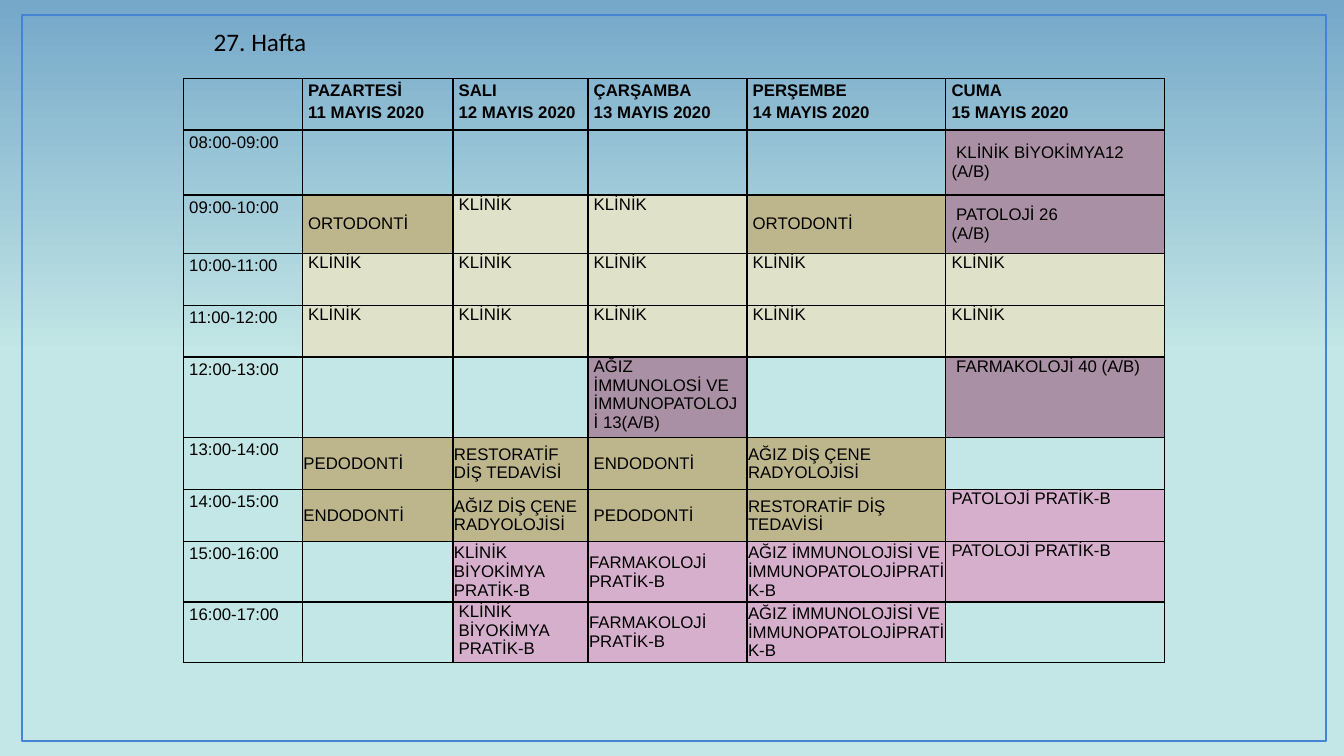
"""Build the weekly timetable slide for week 27."""
from dataclasses import dataclass

from lxml import etree
from pptx import Presentation
from pptx.dml.color import RGBColor
from pptx.enum.shapes import MSO_SHAPE
from pptx.enum.text import MSO_ANCHOR, MSO_AUTO_SIZE, PP_ALIGN
from pptx.oxml.ns import qn
from pptx.util import Inches, Pt

RECTANGLE = MSO_SHAPE.RECTANGLE
TOP, MIDDLE = MSO_ANCHOR.TOP, MSO_ANCHOR.MIDDLE
LEFT = PP_ALIGN.LEFT
FIT_TEXT = MSO_AUTO_SIZE.SHAPE_TO_FIT_TEXT

WIDTH, HEIGHT = 13.33, 7.5
COLORS = {
    "text": "000000",
    "frame": "4584D3",
    "sky_low": "C3E7E6",
    "sky_high": "75A8C9",
    "lecture": "AA90A4",
    "rotation": "BDB68D",
    "clinic": "E0E1C9",
    "practice": "D5AFCB",
}
COLUMN_SHARES = [8.85, 11.2, 10.05, 11.83, 14.8, 16.3]
ROW_SHARES = [6.8, 8.6, 7.7, 6.87, 6.87, 6.87, 6.87, 6.87, 6.87, 6.87]
WIDE_INSET, TIGHT_INSET = 0.43, 0.08


@dataclass(frozen=True)
class Entry:
    text: str = ""
    fill: str = ""
    anchor: MSO_ANCHOR = TOP
    inset: float = WIDE_INSET
    spacing: float = 1.0
    bold: bool = False


def across(share: float) -> int:
    """Turn a percentage of the slide width into a length."""
    return Inches(WIDTH * share / 100)


def down(share: float) -> int:
    """Turn a percentage of the slide height into a length."""
    return Inches(HEIGHT * share / 100)


def color(name: str) -> RGBColor:
    """Look up a palette colour."""
    return RGBColor.from_string(COLORS[name])


def head(text: str) -> Entry:
    """Describe a day heading."""
    return Entry(text, spacing=1.15, bold=True)


def hour(start: int) -> Entry:
    """Describe the label of a one-hour slot."""
    return Entry(f"{start:02}:00-{start + 1:02}:00", spacing=1.15)


def lecture(text: str, anchor: MSO_ANCHOR = MIDDLE) -> Entry:
    """Describe a lecture."""
    return Entry(text, "lecture", anchor)


def tight(text: str, fill: str) -> Entry:
    """Describe a centred entry with narrow margins."""
    return Entry(text, fill, MIDDLE, TIGHT_INSET)


FREE = Entry()
CLINIC = Entry("KLİNİK", "clinic")
ORTHODONTICS = Entry("ORTODONTİ", "rotation", MIDDLE)
RESTORATIVE = tight("RESTORATİF DİŞ TEDAVİSİ", "rotation")
RADIOLOGY = tight("AĞIZ DİŞ ÇENE RADYOLOJİSİ", "rotation")
PATHOLOGY = Entry("PATOLOJİ PRATİK-B", "practice")
BIOCHEMISTRY = "KLİNİK BİYOKİMYA PRATİK-B"
PHARMACOLOGY = tight("FARMAKOLOJİ PRATİK-B", "practice")
IMMUNOLOGY = tight("AĞIZ İMMUNOLOJİSİ VE İMMUNOPATOLOJİPRATİK-B", "practice")

DAYS = ["PAZARTESİ", "SALI", "ÇARŞAMBA", "PERŞEMBE", "CUMA"]
HEADER = [FREE] + [head(f"{day}\n{date} MAYIS 2020") for date, day in enumerate(DAYS, 11)]
SLOTS = [
    [FREE, FREE, FREE, FREE, lecture(" KLİNİK BİYOKİMYA12 (A/B)")],
    [ORTHODONTICS, CLINIC, CLINIC, ORTHODONTICS, lecture(" PATOLOJİ 26\n(A/B)")],
    [CLINIC] * 5,
    [CLINIC] * 5,
    [FREE, FREE, lecture("AĞIZ İMMUNOLOSİ VE İMMUNOPATOLOJİ 13(A/B)", TOP), FREE,
     lecture(" FARMAKOLOJİ 40 (A/B)", TOP)],
    [tight("PEDODONTİ", "rotation"), RESTORATIVE, tight(" ENDODONTİ", "rotation"),
     RADIOLOGY, FREE],
    [tight("ENDODONTİ", "rotation"), RADIOLOGY, tight(" PEDODONTİ", "rotation"),
     RESTORATIVE, PATHOLOGY],
    [FREE, tight(BIOCHEMISTRY, "practice"), PHARMACOLOGY, IMMUNOLOGY, PATHOLOGY],
    [FREE, Entry(BIOCHEMISTRY, "practice"), PHARMACOLOGY, IMMUNOLOGY, FREE],
]
ROWS = [HEADER] + [[hour(start)] + slot for start, slot in enumerate(SLOTS, 8)]


def paint_background(slide) -> None:
    """Fill the slide with the sky gradient."""
    fill = slide.background.fill
    fill.gradient()
    fill.gradient_angle = 90
    stops = [(0.53, "sky_low"), (1.0, "sky_high")]
    for stop, (position, name) in zip(fill.gradient_stops, stops):
        stop.position = position
        stop.color.rgb = color(name)


def add_frame(slide) -> None:
    """Draw the thin border around the slide."""
    sp = slide.shapes.add_shape(RECTANGLE, across(1.65), down(2), across(97), down(96))
    sp.shadow.inherit = False
    sp.fill.background()
    sp.line.color.rgb = color("frame")
    sp.line.width = Pt(1.5)


def set_title(slide, text: str) -> None:
    """Place and format the title."""
    sp = slide.shapes.title
    sp.left, sp.top, sp.width, sp.height = across(15.15), down(2.8), across(8.55), down(5.33)
    tf = sp.text_frame
    tf.text = text
    tf.word_wrap = False
    tf.auto_size = FIT_TEXT
    tf.vertical_anchor = TOP
    p = tf.paragraphs[0]
    p.alignment = LEFT
    font = p.runs[0].font
    font.name, font.size = "Calibri", Pt(18)
    font.color.rgb = color("text")


def add_borders(cell) -> None:
    """Give a cell a line on every side."""
    props = cell._tc.get_or_add_tcPr()
    for index, side in enumerate(("lnL", "lnR", "lnT", "lnB")):
        line = etree.Element(qn(f"a:{side}"), w=str(Pt(1)))
        solid = etree.SubElement(line, qn("a:solidFill"))
        etree.SubElement(solid, qn("a:srgbClr"), val=COLORS["text"])
        props.insert(index, line)


def write_cell(cell, entry: Entry) -> None:
    """Fill and format one timetable cell."""
    if entry.fill:
        cell.fill.solid()
        cell.fill.fore_color.rgb = color(entry.fill)
    else:
        cell.fill.background()
    add_borders(cell)
    cell.margin_left = cell.margin_right = across(entry.inset)
    cell.margin_top = cell.margin_bottom = 0
    cell.vertical_anchor = entry.anchor
    cell.text_frame.text = entry.text
    for p in cell.text_frame.paragraphs:
        p.line_spacing = entry.spacing
        for r in p.runs:
            r.font.name, r.font.size, r.font.bold = "Arial", Pt(12), entry.bold
            r.font.color.rgb = color("text")


def add_timetable(slide) -> None:
    """Draw the timetable."""
    table = slide.shapes.add_table(
        len(ROWS), len(COLUMN_SHARES), across(13.65), down(10.4),
        across(sum(COLUMN_SHARES)), down(sum(ROW_SHARES))).table
    table.first_row = table.horz_banding = False
    for column, share in zip(table.columns, COLUMN_SHARES):
        column.width = across(share)
    for row, share, entries in zip(table.rows, ROW_SHARES, ROWS):
        row.height = down(share)
        for cell, entry in zip(row.cells, entries):
            write_cell(cell, entry)


def main() -> None:
    """Build and save the presentation."""
    prs = Presentation()
    prs.slide_width, prs.slide_height = Inches(WIDTH), Inches(HEIGHT)
    slide = prs.slides.add_slide(prs.slide_layouts[5])
    paint_background(slide)
    add_frame(slide)
    add_timetable(slide)
    set_title(slide, "27. Hafta")
    prs.save("out.pptx")


if __name__ == "__main__":
    main()
